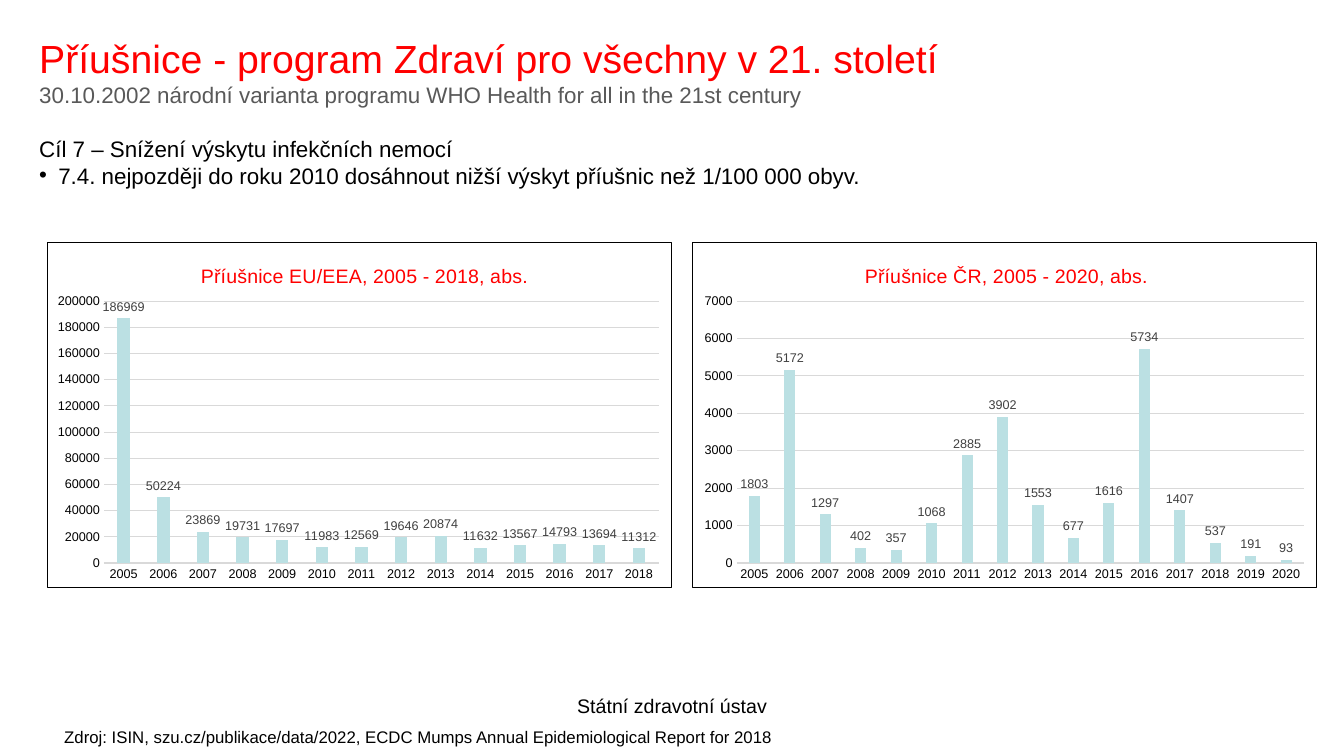
import pptx
import pptx.chart.data
import pptx.dml.color
import pptx.enum.chart
import pptx.enum.text
import pptx.oxml
import pptx.oxml.ns
import pptx.util
from pptx.util import Cm, Pt

FONT = "Arial"
BLACK, RED, GREY = "000000", "FF0000", "595959"
GRID, BAR, LABEL = "D9D9D9", "BBE0E3", "404040"
NAMESPACES = pptx.oxml.ns.nsdecls("c", "a")

EU_CASES = [186969, 50224, 23869, 19731, 17697, 11983, 12569,
            19646, 20874, 11632, 13567, 14793, 13694, 11312]
CZECH_CASES = [1803, 5172, 1297, 402, 357, 1068, 2885, 3902,
               1553, 677, 1616, 5734, 1407, 537, 191, 93]


def color(hex_string):
    return pptx.dml.color.RGBColor.from_string(hex_string)


def style_font(font, size, hex_string):
    font.name = FONT
    font.size = Pt(size)
    font.bold = False
    font.color.rgb = color(hex_string)


def add_text_box(page, left, top, width, height):
    box = page.shapes.add_textbox(Cm(left), Cm(top), Cm(width), Cm(height))
    box.text_frame.word_wrap = True
    return box.text_frame


def write(para, text, size, hex_string):
    span = para.add_run()
    span.text = text
    style_font(span.font, size, hex_string)


def add_bullet(para, indent):
    properties = para._p.get_or_add_pPr()
    properties.set("marL", str(Cm(indent)))
    properties.set("indent", str(-Cm(indent)))
    properties.append(pptx.oxml.parse_xml(
        f'<a:buFont {NAMESPACES} typeface="{FONT}"/>'))
    properties.append(pptx.oxml.parse_xml(f'<a:buChar {NAMESPACES} char="•"/>'))


def set_layout(parent, index, target="", **fractions):
    """Place a chart part by fractions (x, y, w, h) of the chart area."""
    for old in parent.findall(pptx.oxml.ns.qn("c:layout")):
        parent.remove(old)
    inner = f'<c:layoutTarget val="{target}"/>' if target else ""
    modes = "".join(f'<c:{key}Mode val="edge"/>' for key in "xy")
    values = "".join(f'<c:{key} val="{value}"/>' for key, value in fractions.items())
    parent.insert(index, pptx.oxml.parse_xml(
        f"<c:layout {NAMESPACES}><c:manualLayout>{inner}{modes}{values}"
        "</c:manualLayout></c:layout>"))


def add_border(chart):
    border = pptx.oxml.parse_xml(
        f'<c:spPr {NAMESPACES}><a:noFill/><a:ln w="{Pt(0.75)}"><a:solidFill>'
        f'<a:srgbClr val="{BLACK}"/></a:solidFill></a:ln></c:spPr>')
    chart._chartSpace.find(pptx.oxml.ns.qn("c:chart")).addnext(border)


def style_axes(chart, maximum, step):
    for axis in (chart.category_axis, chart.value_axis):
        axis.major_tick_mark = pptx.enum.chart.XL_TICK_MARK.NONE
        axis.minor_tick_mark = pptx.enum.chart.XL_TICK_MARK.NONE
        style_font(axis.tick_labels.font, 9, BLACK)
    chart.value_axis.minimum_scale = 0
    chart.value_axis.maximum_scale = maximum
    chart.value_axis.major_unit = step
    chart.value_axis.format.line.fill.background()
    chart.value_axis.has_major_gridlines = True
    for line in (chart.category_axis.format.line,
                 chart.value_axis.major_gridlines.format.line):
        line.color.rgb = color(GRID)
        line.width = Pt(0.75)


def add_case_chart(page, left, title, cases, maximum, step, title_x, plot_x, plot_width):
    data = pptx.chart.data.CategoryChartData()
    data.categories = [str(2005 + offset) for offset in range(len(cases))]
    data.add_series("Series 1", cases)
    chart = page.shapes.add_chart(
        pptx.enum.chart.XL_CHART_TYPE.COLUMN_CLUSTERED,
        Cm(left), Cm(6.1), Cm(15.74), Cm(8.71), data).chart
    style_font(chart.font, 10, BLACK)
    add_border(chart)
    chart.has_legend = False
    chart.has_title = True
    write(chart.chart_title.text_frame.paragraphs[0], title, 14, RED)
    set_layout(chart.chart_title._element, 1, x=title_x, y=0.05)
    set_layout(chart._chartSpace.chart.plotArea, 0, "inner",
               x=plot_x, y=0.17, w=plot_width, h=0.76)
    style_axes(chart, maximum, step)

    plot = chart.plots[0]
    plot.vary_by_categories = False
    plot.gap_width = 219
    plot.overlap = -27
    fill = plot.series[0].format.fill
    fill.solid()
    fill.fore_color.rgb = color(BAR)
    plot.has_data_labels = True
    plot.data_labels.show_value = True
    plot.data_labels.position = pptx.enum.chart.XL_LABEL_POSITION.OUTSIDE_END
    style_font(plot.data_labels.font, 9, LABEL)


def add_heading(page):
    frame = add_text_box(page, 0.74, 0.74, 31.85, 4.95)
    write(frame.paragraphs[0],
          "Příušnice - program Zdraví pro všechny v 21. století", 28, RED)
    write(frame.add_paragraph(),
          "30.10.2002 národní varianta programu WHO Health for all in the 21st century",
          16, GREY)
    goal = frame.add_paragraph()
    goal.space_before = Pt(19)
    write(goal, "Cíl 7 – Snížení výskytu infekčních nemocí", 16, BLACK)
    target = frame.add_paragraph()
    add_bullet(target, 0.48)
    write(target, "7.4. nejpozději do roku 2010 dosáhnout nižší výskyt příušnic "
                  "než 1/100 000 obyv.", 16, BLACK)


def add_footer(page):
    institute = add_text_box(page, 11.58, 17.35, 10.72, 1.32).paragraphs[0]
    institute.alignment = pptx.enum.text.PP_ALIGN.CENTER
    write(institute, "Státní zdravotní ústav", 14, BLACK)
    source = add_text_box(page, 1.37, 18.19, 21.67, 0.76).paragraphs[0]
    write(source, "Zdroj: ISIN, szu.cz/publikace/data/2022, "
                  "ECDC Mumps Annual Epidemiological Report for 2018", 12, BLACK)


def main():
    deck = pptx.Presentation()
    deck.slide_width, deck.slide_height = Cm(33.87), Cm(19.05)
    page = deck.slides.add_slide(deck.slide_layouts[6])
    add_case_chart(page, 17.45, "Příušnice ČR, 2005 - 2020, abs.",
                   CZECH_CASES, 7000, 1000, 0.27, 0.07, 0.91)
    add_case_chart(page, 1.19, "Příušnice EU/EEA, 2005 - 2018, abs.",
                   EU_CASES, 200000, 20000, 0.24, 0.09, 0.89)
    add_heading(page)
    add_footer(page)
    deck.save("out.pptx")


if __name__ == "__main__":
    main()
